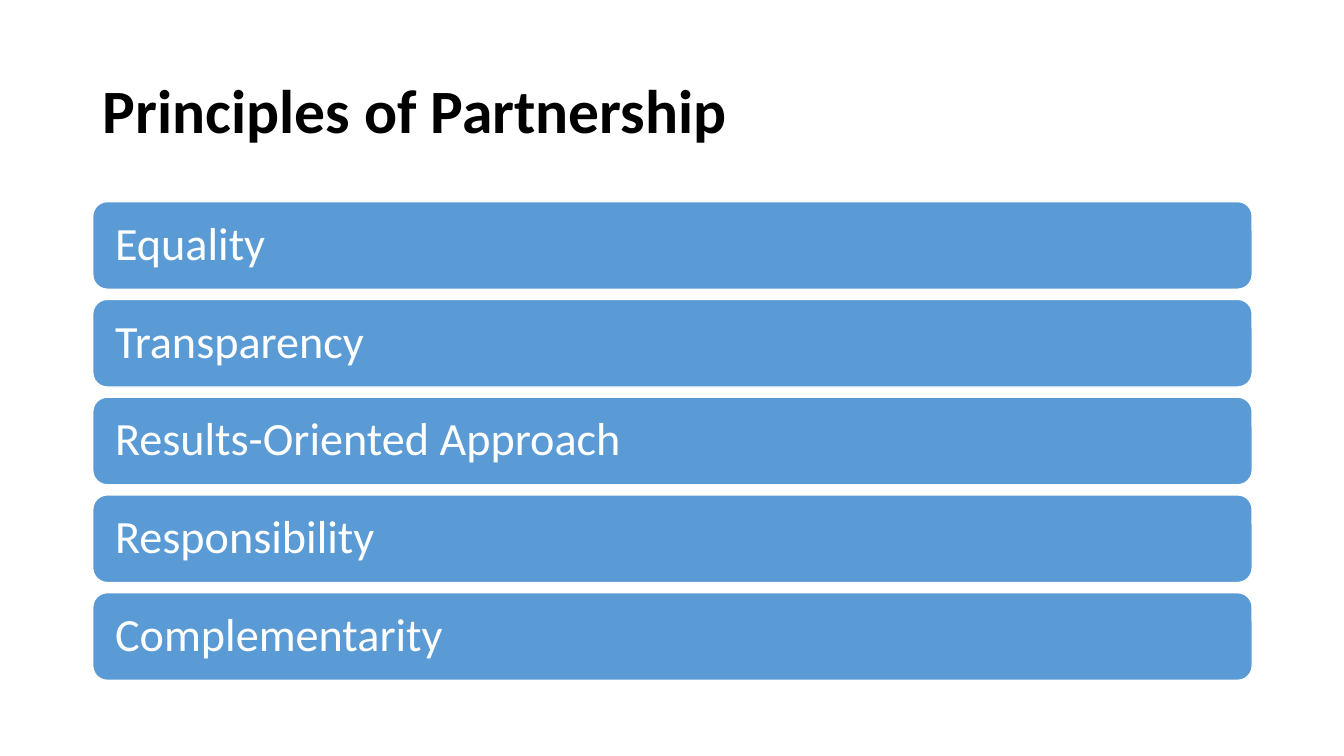
import pptx
import pptx.util
import pptx.dml.color
import pptx.enum.shapes
import pptx.enum.text

# Content
TITLE = "Principles of Partnership"
PRINCIPLES = [
    "Equality",
    "Transparency",
    "Results-Oriented Approach",
    "Responsibility",
    "Complementarity",
]

# Style and grid, in inches
COLORS = {"title": "000000", "bar": "5B9BD5", "white": "FFFFFF"}
FONT = "Calibri"
SLIDE_W, SLIDE_H = 13.33, 7.5
MARGIN = 0.92
CONTENT_W = 11.5
TITLE_TOP, TITLE_H = 0.4, 1.45
BARS_TOP, BAR_H, BAR_PITCH = 2, 0.87, 0.97
BAR_INSET = 0.18

Inches = pptx.util.Inches


def rgb(name):
    return pptx.dml.color.RGBColor.from_string(COLORS[name])


def write(shape, text, size, color, bold=False):
    frame = shape.text_frame
    frame.text = text
    frame.word_wrap = True
    frame.auto_size = pptx.enum.text.MSO_AUTO_SIZE.NONE
    frame.vertical_anchor = pptx.enum.text.MSO_ANCHOR.MIDDLE
    paragraph = frame.paragraphs[0]
    paragraph.alignment = pptx.enum.text.PP_ALIGN.LEFT
    paragraph.line_spacing = 0.9
    font = paragraph.runs[0].font
    font.name = FONT
    font.size = pptx.util.Pt(size)
    font.bold = bold
    font.color.rgb = rgb(color)


def add_bar(slide, row, principle):
    bar = slide.shapes.add_shape(
        pptx.enum.shapes.MSO_SHAPE.ROUNDED_RECTANGLE,
        Inches(MARGIN), Inches(BARS_TOP + row * BAR_PITCH),
        Inches(CONTENT_W), Inches(BAR_H))
    bar.shadow.inherit = False
    bar.fill.solid()
    bar.fill.fore_color.rgb = rgb("bar")
    bar.line.color.rgb = rgb("white")
    bar.line.width = pptx.util.Pt(1)
    write(bar, principle, 33, "white")
    frame = bar.text_frame
    frame.margin_left = frame.margin_right = Inches(BAR_INSET)


def main():
    deck = pptx.Presentation()
    deck.slide_width, deck.slide_height = Inches(SLIDE_W), Inches(SLIDE_H)
    slide = deck.slides.add_slide(deck.slide_layouts.get_by_name("Title Only"))

    # Title
    title = slide.shapes.title
    title.left, title.top = Inches(MARGIN), Inches(TITLE_TOP)
    title.width, title.height = Inches(CONTENT_W), Inches(TITLE_H)
    write(title, TITLE, 44, "title", bold=True)

    # One bar per principle
    for row, principle in enumerate(PRINCIPLES):
        add_bar(slide, row, principle)

    deck.save("out.pptx")


if __name__ == "__main__":
    main()
